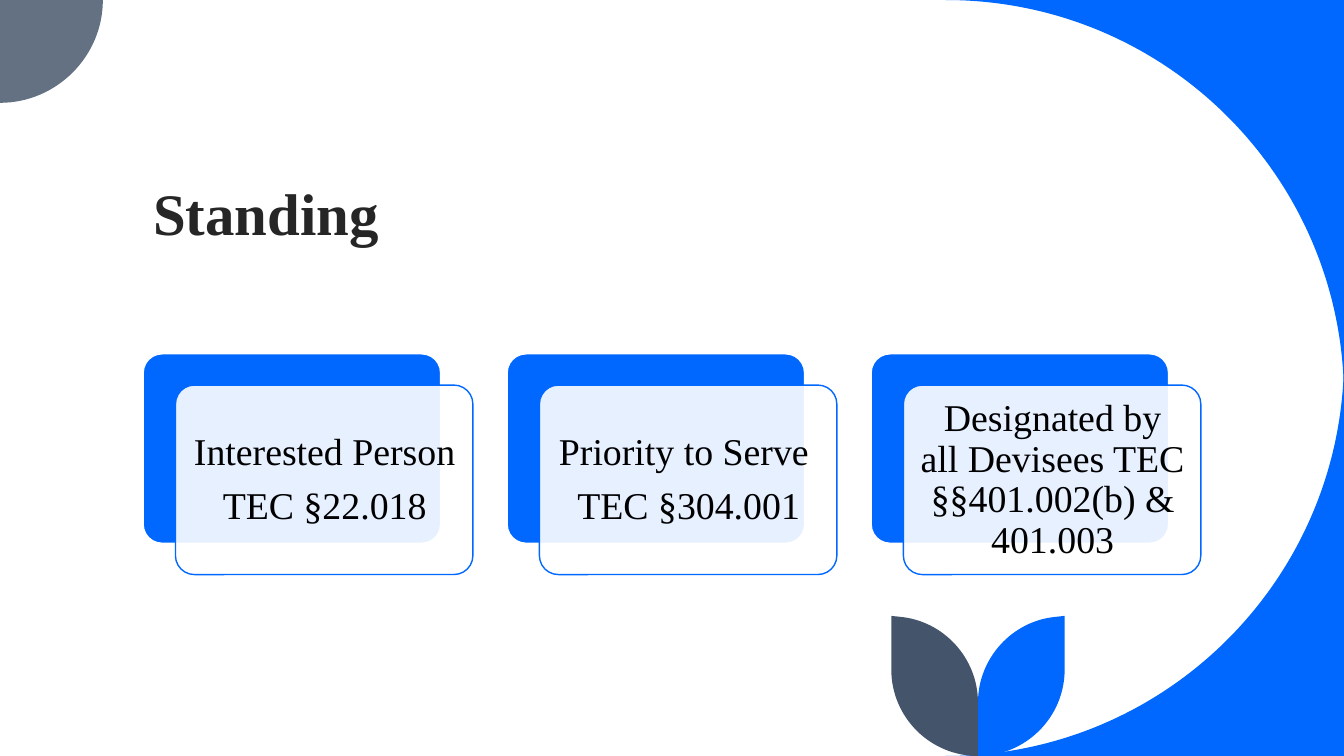
"""Build the Standing slide: a title and three layered cards."""
from dataclasses import dataclass

from lxml import etree
from pptx import Presentation
from pptx import util as u
from pptx.dml.color import RGBColor
from pptx.enum import shapes, text
from pptx.oxml.ns import qn


@dataclass(frozen=True)
class Theme:
    """Colours, font and type sizes."""
    blue: str = "0068FF"
    slate: str = "44546A"
    grey: str = "637183"
    white: str = "FFFFFF"
    ink: str = "262626"
    black: str = "000000"
    font: str = "Times New Roman"
    title_size: float = 42
    card_size: float = 27


class SlideBuilder:
    """Draw elements on one slide in one style."""

    def __init__(self, slide, theme):
        """Keep the slide and the theme."""
        self.slide = slide
        self.theme = theme

    def outline(self, segments, color, place=lambda x, y: (x, y)):
        """Draw a filled outline; one point is a line, three are a curve."""
        points = [tuple(map(u.Inches, place(*pt))) for seg in segments for pt in seg]
        builder = self.slide.shapes.build_freeform(*points[0])
        builder.add_line_segments(points[1:], close=True)
        sp = builder.convert_to_shape()
        lines = iter(list(sp._element.iter(qn("a:lnTo"))))
        for seg in segments[1:]:
            steps = [next(lines) for _ in seg]
            if len(steps) == 3:
                curve = etree.Element(qn("a:cubicBezTo"))
                steps[0].addprevious(curve)
                for step in steps:
                    curve.append(step[0])
                    step.getparent().remove(step)
        sp.shadow.inherit = False
        sp.fill.solid()
        sp.fill.fore_color.rgb = RGBColor.from_string(color)
        sp.line.fill.background()

    def panel(self, left, top, width, height, fill, line, opacity=100):
        """Draw a rounded panel."""
        sp = self.slide.shapes.add_shape(
            shapes.MSO_SHAPE.ROUNDED_RECTANGLE,
            *map(u.Inches, (left, top, width, height)))
        sp.adjustments[0] = 0.1
        sp.shadow.inherit = False
        sp.fill.solid()
        sp.fill.fore_color.rgb = RGBColor.from_string(fill)
        sp.line.color.rgb = RGBColor.from_string(line)
        sp.line.width = u.Pt(1)
        if opacity < 100:
            color = sp._element.spPr.find(qn("a:solidFill"))[0]
            etree.SubElement(color, qn("a:alpha")).set("val", str(opacity * 1000))

    def label(self, box, lines, size, color, anchor, align, spacing,
              after=0, inset=None, bold=False):
        """Write paragraphs in a text box."""
        tf = self.slide.shapes.add_textbox(*map(u.Inches, box)).text_frame
        tf.word_wrap = True
        tf.vertical_anchor = anchor
        if inset is not None:
            tf.margin_left = tf.margin_right = u.Inches(inset)
            tf.margin_top = tf.margin_bottom = u.Inches(inset)
        for i, line in enumerate(lines):
            p = tf.add_paragraph() if i else tf.paragraphs[0]
            p.alignment = align
            p.line_spacing = spacing
            p.space_after = u.Pt(after)
            r = p.add_run()
            r.text = line
            r.font.name = self.theme.font
            r.font.size = u.Pt(size)
            r.font.bold = bold
            r.font.color.rgb = RGBColor.from_string(color)

    def decoration(self):
        """Draw the corner shapes and the two leaves."""
        th = self.theme
        corner = [[(13.33, 0)], [(9.38, 0)],
                  [(11.57, 0), (13.33, 1.77), (13.33, 3.95)]]
        self.outline(corner, th.blue)
        self.outline(corner, th.blue, lambda x, y: (x, 7.5 - y))
        self.outline([[(0, 0)], [(1.02, 0)], [(1.02, 0.56), (0.56, 1.02), (0, 1.02)]],
                     th.grey)
        leaf = [[(0.86, 6.11)], [(0.86, 6.64)],
                [(0.86, 7.12), (0.47, 7.5), (0, 7.5)], [(0, 6.97)],
                [(0, 6.53), (0.34, 6.16), (0.77, 6.12)]]
        for side, color in ((1, th.blue), (-1, th.slate)):
            self.outline(leaf, color, lambda x, y: (9.7 + side * x, y))

    def title(self, words):
        """Write the slide title."""
        th = self.theme
        self.label((1.42, 1.07, 10.5, 1.43), [words], th.title_size, th.ink,
                   text.MSO_ANCHOR.BOTTOM, text.PP_ALIGN.LEFT, 0.8, bold=True)

    def card(self, left, lines):
        """Draw a blue panel with a pale text panel over it."""
        th = self.theme
        top, width, height, shift, pad = 3.51, 2.95, 1.88, 0.32, 0.06
        self.panel(left, top, width, height, th.blue, th.white)
        self.panel(left + shift, top + 0.31, width, height, th.white, th.blue, 90)
        self.label((left + shift + pad, 3.88, 2.84, 1.77), lines, th.card_size, th.black,
                   text.MSO_ANCHOR.MIDDLE, text.PP_ALIGN.CENTER, 0.9, 10, 0.11)


def main():
    """Build and save the slide."""
    prs = Presentation()
    prs.slide_width, prs.slide_height = u.Inches(13.33), u.Inches(7.5)
    builder = SlideBuilder(prs.slides.add_slide(prs.slide_layouts[6]), Theme())
    builder.decoration()
    builder.title("Standing")
    cards = (
        ["Interested Person ", "TEC §22.018"],
        ["Priority to Serve ", "TEC §304.001"],
        ["Designated by all Devisees TEC §§401.002(b) & 401.003"],
    )
    for i, lines in enumerate(cards):
        builder.card(1.42 + 3.61 * i, lines)
    prs.save("out.pptx")


if __name__ == "__main__":
    main()
